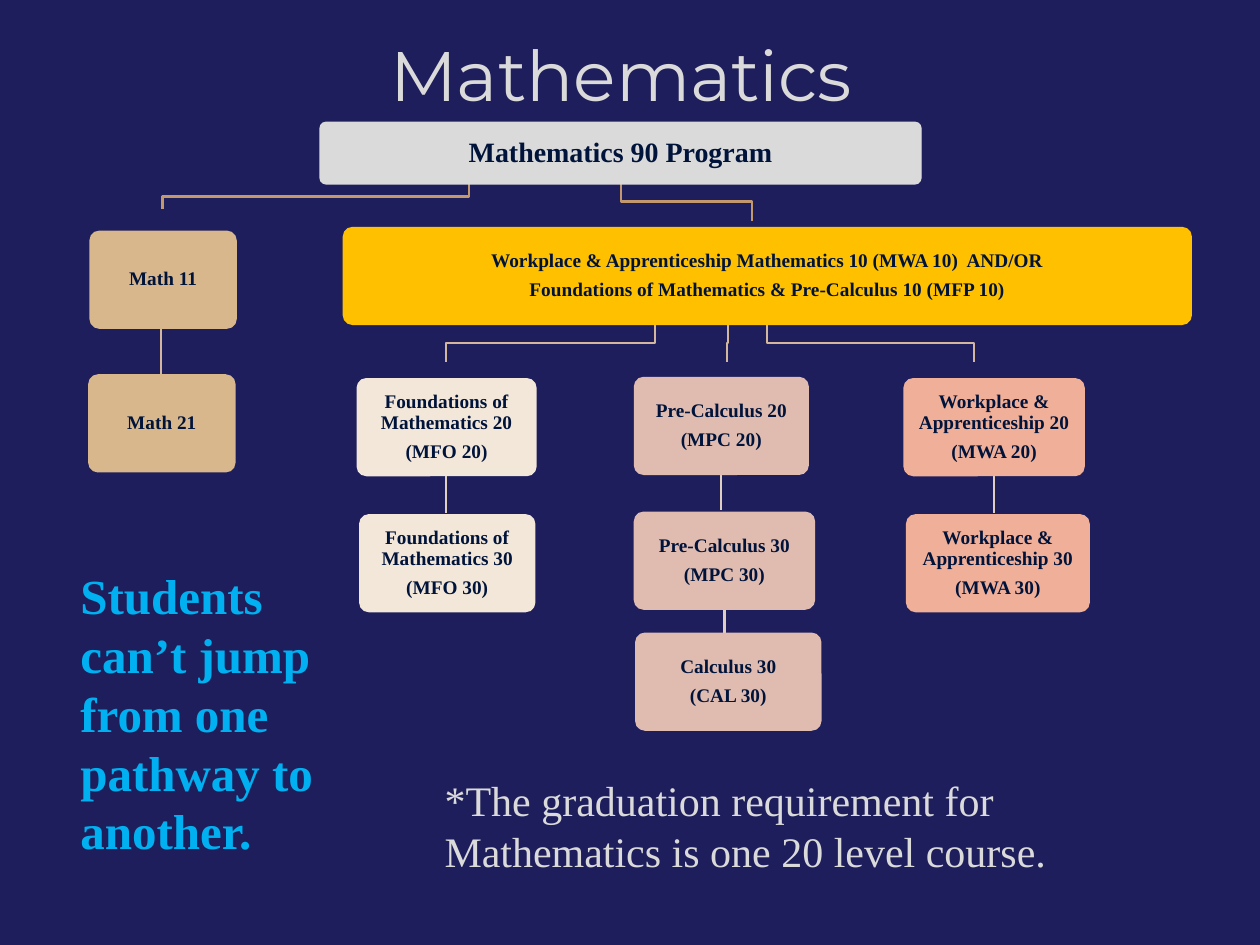
"""Build the Mathematics course pathway slide."""
from lxml.etree import SubElement
from pptx import Presentation
from pptx.dml.color import RGBColor
from pptx.enum.shapes import MSO_CONNECTOR as CONN, MSO_SHAPE as SHAPE
from pptx.enum.text import MSO_ANCHOR as ANCHOR, PP_ALIGN as ALIGN
from pptx.oxml.ns import qn
from pptx.util import Inches, Pt

NAVY = RGBColor(0x1E, 0x1E, 0x5C)
INK = RGBColor(0x00, 0x13, 0x3A)
GREY = RGBColor(0xDA, 0xDA, 0xDA)
SKY = RGBColor(0x00, 0xB0, 0xF0)
TAN = RGBColor(0xD7, 0xB7, 0x8B)
GOLD = RGBColor(0xFF, 0xC0, 0x00)
CREAM = RGBColor(0xF2, 0xE7, 0xD8)
ROSE = RGBColor(0xDF, 0xBB, 0xB0)
SALMON = RGBColor(0xF0, 0xAF, 0x98)
LINE_1 = RGBColor(0xC3, 0x98, 0x6C)
LINE_2 = RGBColor(0xD2, 0xB6, 0x9D)
LINE_3 = RGBColor(0xE0, 0xCE, 0xC0)
SERIF = "Times New Roman"

prs = Presentation()
prs.slide_width, prs.slide_height = Inches(10), Inches(7.5)
COL, ROW = prs.slide_width / 100, prs.slide_height / 75
s = prs.slides.add_slide(prs.slide_layouts[6])
s.background.fill.solid()
s.background.fill.fore_color.rgb = NAVY


def grid(*cells):
    """Turn alternating columns and rows into lengths."""
    return [round(c * (ROW if i % 2 else COL)) for i, c in enumerate(cells)]


def write(tf, lines, color, para, font, frame):
    """Fill a text frame with one paragraph per line."""
    for key, value in {"word_wrap": True, **frame}.items():
        setattr(tf, key, value)
    for i, line in enumerate(lines):
        p = tf.paragraphs[0] if i == 0 else tf.add_paragraph()
        for key, value in para.items():
            setattr(p, key, value)
        r = p.add_run()
        r.text = line
        for key, value in font.items():
            setattr(r.font, key, value)
        r.font.color.rgb = color


elbows = [
    (37.2, 14.6, 15.6, 12.9, 16.6, LINE_1),
    (49.3, 14.6, 16.0, 59.7, 17.5, LINE_1),
    (52.0, 25.8, 27.2, 35.4, 28.7, LINE_2),
    (57.8, 25.8, 27.2, 57.7, 28.7, LINE_2),
    (60.9, 25.8, 27.2, 77.3, 28.7, LINE_2),
]
for x1, y1, bend, x2, y2, color in elbows:
    path = s.shapes.build_freeform(*grid(x1, y1), scale=1.0)
    path.add_line_segments(
        [grid(x1, bend), grid(x2, bend), grid(x2, y2)], close=False)
    sp = path.convert_to_shape()
    sp.shadow.inherit = False
    sp.fill.background()
    sp.line.color.rgb = color
    sp.line.width = Pt(1.25)

drops = [
    (12.8, 26.1, 30.6, LINE_2),
    (35.4, 37.8, 40.7, LINE_3),
    (57.2, 37.7, 40.5, LINE_3),
    (57.5, 48.4, 51.3, LINE_3),
    (78.9, 37.8, 40.7, LINE_3),
]
for x, top, bottom, color in drops:
    cxn = s.shapes.add_connector(CONN.STRAIGHT, *grid(x, top, x, bottom))
    SubElement(cxn.line._get_or_add_ln().getparent(), qn("a:effectLst"))
    cxn.line.color.rgb = color
    cxn.line.width = Pt(1.25)

BOX = 7.8
boxes = [
    (25.4, 9.7, 47.7, 4.9, GREY, 16, ["Mathematics 90 Program"]),
    (7.1, 18.3, 11.7, BOX, TAN, 11, ["Math 11"]),
    (7.0, 29.7, 11.7, BOX, TAN, 11, ["Math 21"]),
    (27.2, 18.0, 67.4, BOX, GOLD, 11,
     ["Workplace & Apprenticeship Mathematics 10 (MWA 10)  AND/OR",
      "Foundations of Mathematics & Pre-Calculus 10 (MFP 10)"]),
    (28.3, 30.0, 14.3, BOX, CREAM, 11,
     ["Foundations of Mathematics 20", "(MFO 20)"]),
    (28.5, 40.8, 14.0, BOX, CREAM, 11,
     ["Foundations of Mathematics 30", "(MFO 30)"]),
    (50.3, 29.9, 13.9, BOX, ROSE, 11, ["Pre-Calculus 20", "(MPC 20)"]),
    (50.3, 40.6, 14.4, BOX, ROSE, 11, ["Pre-Calculus 30", "(MPC 30)"]),
    (50.4, 50.2, 14.8, BOX, ROSE, 11, ["Calculus 30", "(CAL 30)"]),
    (71.7, 30.0, 14.4, BOX, SALMON, 11,
     ["Workplace & Apprenticeship 20", "(MWA 20)"]),
    (71.9, 40.8, 14.6, BOX, SALMON, 11,
     ["Workplace & Apprenticeship 30", "(MWA 30)"]),
]
sides = ("margin_left", "margin_top", "margin_right", "margin_bottom")
inset = {**dict.fromkeys(sides, Inches(0.05)),
         "vertical_anchor": ANCHOR.MIDDLE}
for x, y, w, h, color, size, lines in boxes:
    sp = s.shapes.add_shape(SHAPE.ROUNDED_RECTANGLE, *grid(x, y, w, h))
    sp.adjustments[0] = 0.1
    sp.shadow.inherit = False
    sp.fill.solid()
    sp.fill.fore_color.rgb = color
    sp.line.fill.background()
    if color == GREY:
        sp.line.color.rgb = GREY
        sp.line.width = Pt(0.75)
    write(sp.text_frame, lines, INK,
          {"alignment": ALIGN.CENTER, "line_spacing": 0.9,
           "space_after": Pt(size * 0.4)},
          {"size": Pt(size), "name": SERIF, "bold": True}, inset)

texts = [
    (24.3, -0.4, 50, 12.5, "Mathematics", GREY, ALIGN.CENTER, ANCHOR.MIDDLE,
     {"size": Pt(40), "name": "Montserrat"}),
    (34.3, 61.0, 50.7, 9.1,
     "*The graduation requirement for Mathematics is one 20 level course.",
     GREY, ALIGN.LEFT, ANCHOR.TOP, {"size": Pt(24), "name": SERIF}),
    (5.4, 44.4, 24.0, 24.6,
     "Students can’t jump from one pathway to another.",
     SKY, ALIGN.LEFT, ANCHOR.TOP,
     {"size": Pt(28), "name": SERIF, "bold": True}),
]
for x, y, w, h, text, color, align, anchor, font in texts:
    tf = s.shapes.add_textbox(*grid(x, y, w, h)).text_frame
    write(tf, [text], color, {"alignment": align}, font,
          {"vertical_anchor": anchor})
    if anchor == ANCHOR.MIDDLE:
        rPr = tf.paragraphs[0].runs[0].font._element
        effects = SubElement(rPr, qn("a:effectLst"))
        rPr.find(qn("a:solidFill")).addnext(effects)
        shadow = SubElement(effects, qn("a:outerShdw"), blurRad="38100",
                            dist="25400", dir="2700000")
        SubElement(shadow, qn("a:srgbClr"), val="000000")

prs.save("out.pptx")
